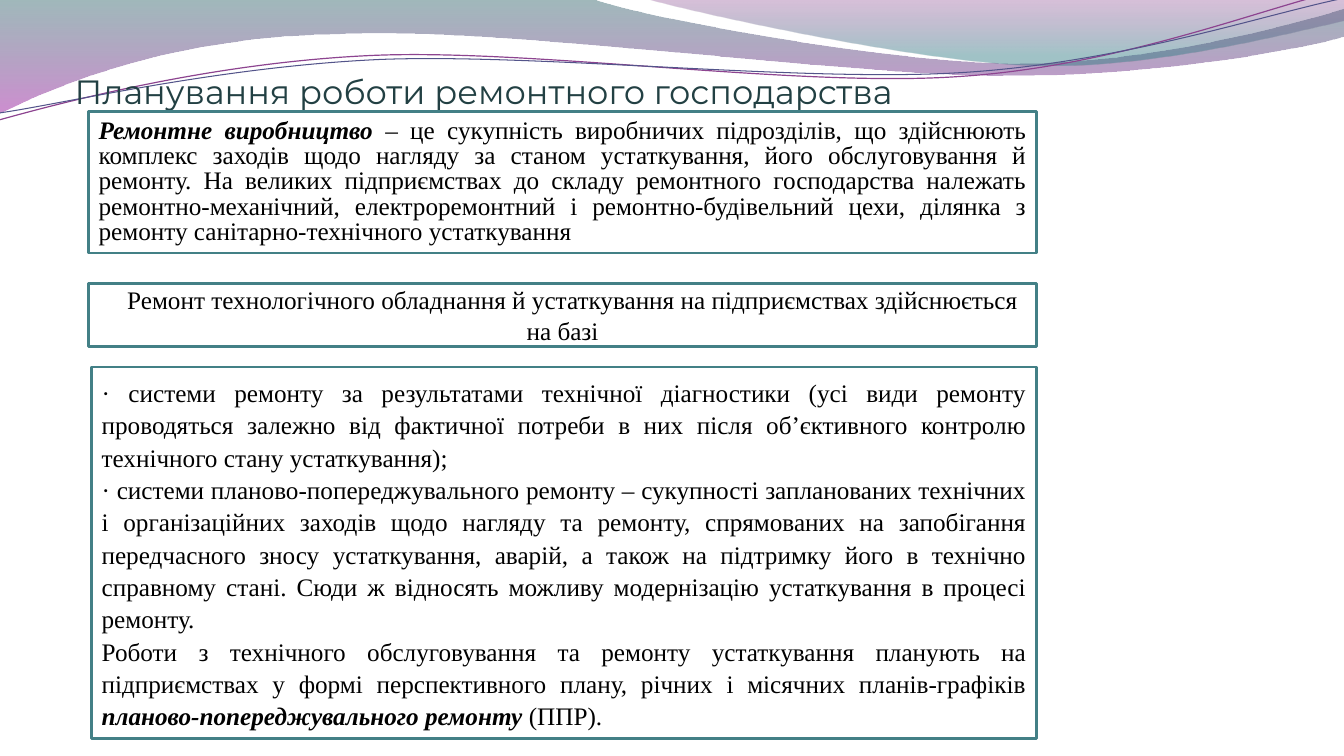
from lxml.etree import SubElement
from pptx import Presentation
from pptx.dml.color import RGBColor as RGB
from pptx.enum.shapes import MSO_SHAPE as SHAPE
from pptx.enum.text import MSO_ANCHOR as ANCHOR, PP_ALIGN as ALIGN
from pptx.oxml.ns import qn
from pptx.util import Inches, Pt

COLORS = {
    "title": "224043", "text": "000000", "box": "FFFFFF", "border": "438086",
    "teal": "2D6368", "violet": "A530A9", "plum": "7F2F82", "sea": "2F7B82",
    "purple": "8D4490", "indigo": "53548A",
}
COLS, ROWS = 1333, 750


def color(name):
    return RGB.from_string(COLORS[name])


class Deck:
    """Draws styled elements on the current slide, on a grid of COLS by ROWS."""

    def __init__(self):
        self.prs = Presentation()
        self.prs.slide_width, self.prs.slide_height = Inches(13.33), Inches(7.5)
        self.heading, self.body = "Montserrat", "Times New Roman"
        self.shapes = None

    def new_slide(self):
        self.shapes = self.prs.slides.add_slide(self.prs.slide_layouts[6]).shapes

    def point(self, col, row):
        return (round(self.prs.slide_width * col / COLS),
                round(self.prs.slide_height * row / ROWS))

    def area(self, left, top, width, height):
        return *self.point(left, top), *self.point(width, height)

    def curve(self, start, segments, closed):
        knots = [self.point(*seg[i:i + 2])
                 for seg in segments for i in range(0, len(seg), 2)]
        builder = self.shapes.build_freeform(*self.point(*start))
        builder.add_line_segments(knots, close=closed)
        sp = builder.convert_to_shape()
        sp.shadow.inherit = False
        steps = iter(list(sp._element.spPr.iter(qn("a:lnTo"))))
        for seg in segments:
            first = next(steps)
            if len(seg) == 6:
                first.tag = qn("a:cubicBezTo")
                for step in (next(steps), next(steps)):
                    first.append(step[0])
                    step.getparent().remove(step)
        return sp

    def wave(self, start, segments, stops):
        sp = self.curve(start, segments, True)
        sp.line.fill.background()
        sp.fill.gradient()
        sp.fill.gradient_angle = 270
        for stop, (position, name, _) in zip(sp.fill.gradient_stops, stops):
            stop.position = position
            stop.color.rgb = color(name)
        tints = sp._element.spPr.iter(qn("a:srgbClr"))
        for tint, (_, _, opacity) in zip(list(tints), stops):
            SubElement(tint, qn("a:alpha"), val=str(opacity * 1000))

    def strand(self, start, segments, name, width):
        sp = self.curve(start, segments, False)
        sp.fill.background()
        sp.line.color.rgb = color(name)
        sp.line.width = Pt(width)

    def font(self, p, name, size, tint):
        p.font.name, p.font.size = name, Pt(size)
        p.font.color.rgb = color(tint)

    def title(self, area, text):
        tf = self.shapes.add_textbox(*self.area(*area)).text_frame
        tf.word_wrap = True
        tf.vertical_anchor = ANCHOR.BOTTOM
        tf.margin_left = tf.margin_right = tf.margin_bottom = 0
        p = tf.paragraphs[0]
        p.text = text
        self.font(p, self.heading, 24, "title")

    def box(self, area, paragraphs, align=ALIGN.JUSTIFY, spacing=None, indent=0):
        sp = self.shapes.add_shape(SHAPE.RECTANGLE, *self.area(*area))
        sp.shadow.inherit = False
        sp.fill.solid()
        sp.fill.fore_color.rgb = color("box")
        sp.line.color.rgb = color("border")
        sp.line.width = Pt(2)
        tf = sp.text_frame
        tf.word_wrap = True
        tf.vertical_anchor = ANCHOR.MIDDLE
        for i, runs in enumerate(paragraphs):
            p = tf.add_paragraph() if i else tf.paragraphs[0]
            p.alignment, p.line_spacing = align, spacing
            self.font(p, self.body, 18, "text")
            if indent:
                p._p.get_or_add_pPr().set("indent", str(self.point(indent, 0)[0]))
            for text, strong in runs:
                r = p.add_run()
                r.text = text
                if strong:
                    r.font.bold = r.font.italic = True


def main():
    deck = Deck()
    deck.new_slide()

    deck.wave((0, 0), [
        (587, -1), (634, 17, 885, 63, 1011, 63), (1138, 63, 1278, 26, 1333, 9),
        (1335, 36), (1311, 44, 1160, 76, 994, 75), (829, 75, 509, 28, 343, 34),
        (172, 36, 61, 83, -1, 113),
    ], [(0, "teal", 45), (1, "violet", 55)])
    deck.wave((639, -1), [
        (679, 11, 909, 62, 1025, 65), (1141, 69, 1282, 32, 1333, 21), (1333, 0),
    ], [(0, "plum", 30), (0.8, "sea", 45)])
    deck.strand((-1, 119), [
        (64, 101, 211, 62, 369, 55), (527, 48, 790, 87, 950, 76),
        (1110, 66, 1252, 8, 1331, -10),
    ], "purple", 0.85)
    deck.strand((0, 112), [
        (63, 103, 218, 66, 378, 59), (537, 53, 796, 82, 955, 72),
        (1115, 62, 1255, 14, 1334, -2),
    ], "indigo", 0.75)

    deck.title((74, 40, 968, 70), "Планування роботи ремонтного господарства")
    deck.box((88, 111, 940, 140), [[
        ("Ремонтне виробництво ", True),
        ("– це сукупність виробничих підрозділів, що здійснюють комплекс заходів "
         "щодо нагляду за станом устаткування, його обслуговування й ремонту. "
         "На великих підприємствах до складу ремонтного господарства належать "
         "ремонтно-механічний, електроремонтний і ремонтно-будівельний цехи, "
         "ділянка з ремонту санітарно-технічного устаткування", False),
    ]], spacing=Pt(18))
    deck.box((88, 281, 940, 63), [[
        ("Ремонт технологічного обладнання й устаткування на підприємствах "
         "здійснюється на базі", False),
    ]], align=ALIGN.CENTER, indent=20)
    deck.box((91, 364, 937, 369), [
        [("· системи ремонту за результатами технічної діагностики (усі види ремонту "
          "проводяться залежно від фактичної потреби в них після об’єктивного "
          "контролю технічного стану устаткування);", False)],
        [("· системи планово-попереджувального ремонту – сукупності запланованих "
          "технічних і організаційних заходів щодо нагляду та ремонту, спрямованих "
          "на запобігання передчасного зносу устаткування, аварій, а також на "
          "підтримку його в технічно справному стані. Сюди ж відносять можливу "
          "модернізацію устаткування в процесі ремонту.", False)],
        [("Роботи з технічного обслуговування та ремонту устаткування планують на "
          "підприємствах у формі перспективного плану, річних і місячних "
          "планів-графіків ", False),
         ("планово-попереджувального ремонту ", True),
         ("(ППР).", False)],
    ], spacing=1.07)

    deck.prs.save("out.pptx")


if __name__ == "__main__":
    main()
